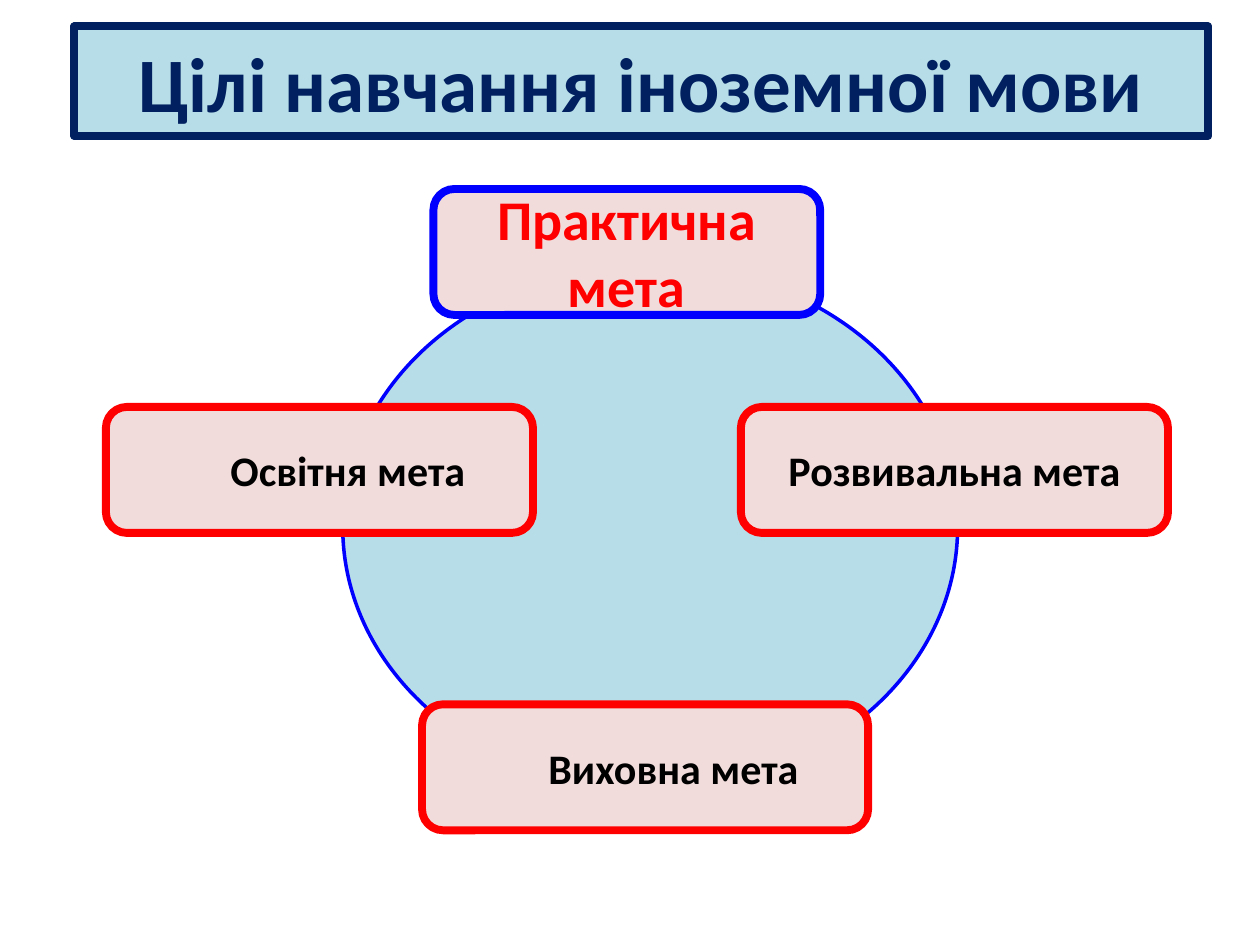
from dataclasses import dataclass

from pptx import Presentation
from pptx.dml.color import RGBColor
from pptx.enum.shapes import MSO_SHAPE as SHAPE
from pptx.enum.text import MSO_ANCHOR as ANCHOR, MSO_AUTO_SIZE as AUTO, PP_ALIGN as ALIGN
from pptx.util import Inches, Pt


@dataclass(frozen=True)
class Theme:
    """Colours, type sizes and line widths of the slide."""
    font: str = "Calibri"
    navy: str = "002060"
    sky: str = "B7DEE8"
    blue: str = "0000FF"
    rose: str = "F2DCDB"
    red: str = "FF0000"
    black: str = "000000"
    title: int = 44
    main: int = 32
    label: int = 24
    border: float = 4.5
    outline: float = 2


class Deck:
    """Draws styled elements on the current slide."""

    def __init__(self, theme):
        """Open a presentation with one title-only slide."""
        self.t = theme
        self.prs = Presentation()
        self.prs.slide_width, self.prs.slide_height = Inches(10), Inches(7.5)
        self.s = self.prs.slides.add_slide(self.prs.slide_layouts[5])
        self.group = self.s.shapes.add_group_shape()

    def paint(self, sp, fill, line, width):
        """Set the fill and the border of a shape."""
        sp.shadow.inherit = False
        sp.fill.solid()
        sp.fill.fore_color.rgb = RGBColor.from_string(fill)
        sp.line.color.rgb = RGBColor.from_string(line)
        sp.line.width = Pt(width)

    def label(self, sp, text, size, color):
        """Put bold centred text into a shape."""
        tf = sp.text_frame
        tf.text = text
        tf.word_wrap = True
        tf.auto_size = AUTO.NONE
        tf.vertical_anchor = ANCHOR.MIDDLE
        for p in tf.paragraphs:
            p.alignment = ALIGN.CENTER
            p.font.name, p.font.size, p.font.bold = self.t.font, Pt(size), True
            p.font.color.rgb = RGBColor.from_string(color)

    def title(self, text, x, y, w, h):
        """Fill and frame the title placeholder."""
        sp = self.s.shapes.title
        sp.left, sp.top, sp.width, sp.height = map(Inches, (x, y, w, h))
        self.paint(sp, self.t.sky, self.t.navy, self.t.border)
        self.label(sp, text, self.t.title, self.t.navy)

    def circle(self, x, y, w, h):
        """Draw the ellipse that links the goals."""
        sp = self.group.shapes.add_shape(SHAPE.OVAL, *map(Inches, (x, y, w, h)))
        self.paint(sp, self.t.sky, self.t.blue, self.t.outline)

    def goal(self, text, x, y, w, indent=0, main=False):
        """Draw a rounded goal box, emphasised when it is the main one."""
        t = self.t
        sp = self.group.shapes.add_shape(SHAPE.ROUNDED_RECTANGLE, *map(Inches, (x, y, w, 1)))
        self.paint(sp, t.rose, t.blue if main else t.red, t.border)
        self.label(sp, text, t.main if main else t.label, t.red if main else t.black)
        sp.text_frame.margin_left = Inches(0.1 + indent)

    def save(self):
        """Save the presentation."""
        self.prs.save("out.pptx")


def main():
    """Build the slide on the goals of language teaching."""
    deck = Deck(Theme())
    deck.title("Цілі навчання іноземної мови", 0.59, 0.21, 9, 0.87)
    deck.circle(2.72, 2.1, 4.88, 4.17)
    deck.goal("Практична\nмета", 3.44, 1.5, 3.07, main=True)
    deck.goal("Освітня мета", 0.84, 3.23, 3.39, indent=0.45)
    deck.goal("Розвивальна мета", 5.88, 3.23, 3.39)
    deck.goal("Виховна мета", 3.35, 5.59, 3.54, indent=0.45)
    deck.save()


if __name__ == "__main__":
    main()
